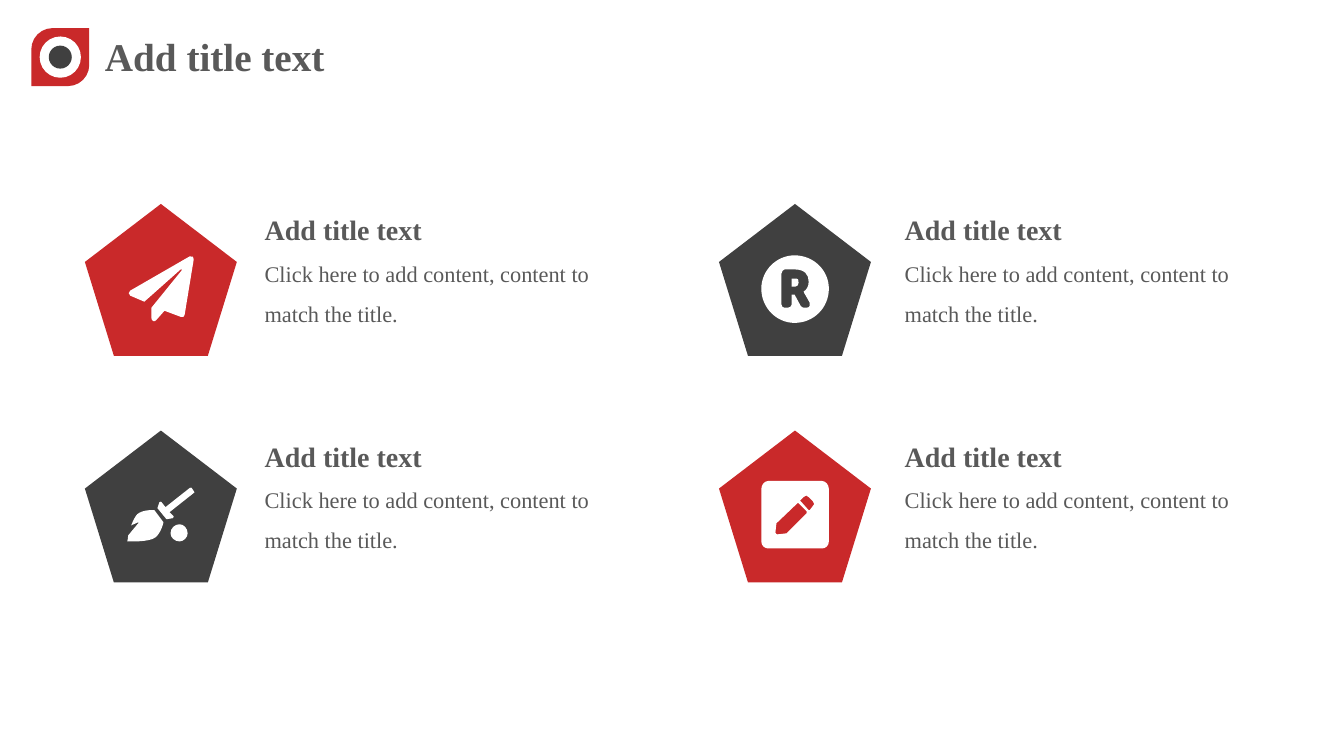
from dataclasses import dataclass

from lxml.etree import SubElement
from pptx import Presentation
from pptx.dml.color import RGBColor
from pptx.enum.shapes import MSO_SHAPE
from pptx.enum.text import MSO_ANCHOR, MSO_AUTO_SIZE, PP_ALIGN
from pptx.oxml.ns import qn
from pptx.util import Cm, Pt

COLORS = {"red": "C9292A", "dark": "404040", "text": "595959", "white": "FFFFFF"}
FONT = "Times New Roman"
HEADING = "Add title text"
BODY = "Click here to add content, content to match the title."

LEFT, TOP = 2.14, 5.14
PITCH_X, PITCH_Y = 15.98, 5.71
PENTAGON = 3.83
TEXT_LEFT, TEXT_PITCH_X, TEXT_RISE = 6.42, 16.13, 0.33
ICON_UNIT = Cm(0.0254)

# A contour lists points (x, y) and cubic curves (x1, y1, x2, y2, x, y),
# in icon units from the pentagon's top left corner.
Contour = list[tuple[int, ...]]

PLANE: list[Contour] = [
    [(104, 52), (45, 86), (43, 87, 43, 90, 45, 91), (59, 97), (95, 65),
     (96, 64, 97, 65, 96, 66), (66, 103), (66, 113), (66, 116, 69, 118, 71, 115),
     (79, 106), (95, 112), (97, 113, 99, 112, 99, 110), (108, 55),
     (109, 53, 106, 51, 104, 52)],
]
BROOM: list[Contour] = [
    [(69, 79), (78, 91), (78, 91, 76, 101, 70, 106), (64, 111, 42, 110, 42, 110),
     (42, 110, 43, 107, 43, 104), (53, 92), (54, 92, 53, 91, 53, 91), (46, 94),
     (48, 89, 50, 85, 52, 83), (58, 78, 69, 79, 69, 79)],
    [(94, 93), (89, 93, 85, 97, 85, 102), (85, 106, 89, 110, 94, 110),
     (98, 110, 102, 106, 102, 102), (102, 97, 98, 93, 94, 93)],
    [(108, 60), (106, 57), (106, 57, 105, 56, 104, 57), (80, 76), (76, 71),
     (76, 70, 75, 71, 74, 71), (72, 77), (81, 88), (87, 87),
     (88, 87, 88, 86, 88, 85), (84, 81), (108, 62), (109, 62, 109, 61, 108, 60)],
]
REGISTERED: list[Contour] = [
    [(79, 78), (79, 80, 78, 82, 76, 82), (72, 82), (72, 74), (75, 74),
     (79, 74, 79, 75, 79, 78)],
    [(109, 84), (109, 103, 94, 118, 75, 118), (57, 118, 42, 103, 42, 84),
     (42, 66, 57, 51, 75, 51), (94, 51, 109, 66, 109, 84)],
    [(90, 98), (84, 87, 84, 88, 84, 87), (87, 85, 89, 82, 89, 77),
     (89, 70, 85, 65, 75, 65), (65, 65), (64, 65, 62, 67, 62, 69), (62, 100),
     (62, 102, 64, 103, 65, 103), (68, 103), (70, 103, 72, 102, 72, 100), (72, 90),
     (75, 90), (81, 101), (82, 102, 83, 103, 84, 103), (87, 103),
     (90, 103, 91, 100, 90, 98)],
]
PENCIL: list[Contour] = [
    [(102, 117), (49, 117), (45, 117, 42, 114, 42, 110), (42, 58),
     (42, 54, 45, 50, 49, 50), (102, 50), (106, 50, 109, 54, 109, 58), (109, 110),
     (109, 114, 106, 117, 102, 117)],
    [(78, 72), (57, 92), (56, 101), (56, 102, 57, 103, 58, 103), (67, 102), (87, 82),
     (87, 81, 87, 81, 87, 80), (79, 72), (78, 72, 78, 72, 78, 72)],
    [(93, 70), (89, 66), (88, 64, 85, 64, 84, 66), (81, 69), (80, 70, 80, 70, 81, 70),
     (89, 79), (89, 79, 90, 79, 90, 79), (93, 75), (95, 74, 95, 72, 93, 70)],
]


@dataclass
class Item:
    col: int
    row: int
    color: str
    icon: list[Contour]


@dataclass
class BadgePart:
    shape: MSO_SHAPE
    left: float
    top: float
    size: float
    color: str


ITEMS = [
    Item(0, 0, "red", PLANE),
    Item(0, 1, "dark", BROOM),
    Item(1, 0, "dark", REGISTERED),
    Item(1, 1, "red", PENCIL),
]
BADGE = [
    BadgePart(MSO_SHAPE.ROUND_2_DIAG_RECTANGLE, 0.79, 0.71, 1.46, "red"),
    BadgePart(MSO_SHAPE.OVAL, 1.0, 0.92, 1.04, "white"),
    BadgePart(MSO_SHAPE.OVAL, 1.23, 1.15, 0.58, "dark"),
]


def paint(sp, color: str) -> None:
    sp.fill.solid()
    sp.fill.fore_color.rgb = RGBColor.from_string(COLORS[color])
    sp.line.fill.background()
    sp.shadow.inherit = False


def add_square(s, shape: MSO_SHAPE, left: float, top: float, size: float, color: str):
    """Add a preset shape as wide as it is high, in cm."""
    sp = s.shapes.add_shape(shape, Cm(left), Cm(top), Cm(size), Cm(size))
    paint(sp, color)
    return sp


def write(p, text: str, *, size: float, bold: bool = False, spacing: float = 1.0) -> None:
    p.alignment = PP_ALIGN.LEFT
    p.line_spacing = spacing
    r = p.add_run()
    r.text = text
    r.font.name = FONT
    r.font.size = Pt(size)
    r.font.bold = bold
    r.font.color.rgb = RGBColor.from_string(COLORS["text"])


def bend(line, seg: tuple[int, ...]) -> None:
    """Turn a path's straight segment into the cubic curve seg."""
    end = line[0]
    dx, dy = int(end.get("x")) - seg[4], int(end.get("y")) - seg[5]
    line.remove(end)
    line.tag = qn("a:cubicBezTo")
    for x, y in zip(seg[::2], seg[1::2]):
        SubElement(line, qn("a:pt"), x=str(x + dx), y=str(y + dy))


def add_icon(s, contours: list[Contour], left: float, top: float) -> None:
    builder = s.shapes.build_freeform(*contours[0][0], scale=ICON_UNIT)
    for i, contour in enumerate(contours):
        if i:
            builder.move_to(*contour[0])
        builder.add_line_segments([seg[-2:] for seg in contour[1:]], close=True)
    sp = builder.convert_to_shape(Cm(left), Cm(top))
    segments = [seg for contour in contours for seg in contour[1:]]
    lines = [el for el in sp._element.iter(qn("a:lnTo"))]
    for line, seg in zip(lines, segments):
        if len(seg) == 6:
            bend(line, seg)
    paint(sp, "white")


def add_title(s) -> None:
    sp = s.shapes.title
    sp.left, sp.top, sp.width, sp.height = Cm(2.39), Cm(0.69), Cm(6.12), Cm(1.45)
    tf = sp.text_frame
    tf.word_wrap = False
    tf.auto_size = MSO_AUTO_SIZE.NONE
    tf.vertical_anchor = MSO_ANCHOR.TOP
    write(tf.paragraphs[0], HEADING, size=28, bold=True)


def add_badge(s) -> None:
    for part in BADGE:
        sp = add_square(s, part.shape, part.left, part.top, part.size, part.color)
        if part.shape == MSO_SHAPE.ROUND_2_DIAG_RECTANGLE:
            sp.adjustments[0] = 0.367


def add_item(s, item: Item) -> None:
    left, top = LEFT + item.col * PITCH_X, TOP + item.row * PITCH_Y
    add_square(s, MSO_SHAPE.REGULAR_PENTAGON, left, top, PENTAGON, item.color)
    add_icon(s, item.icon, left, top)
    sp = s.shapes.add_textbox(Cm(TEXT_LEFT + item.col * TEXT_PITCH_X),
                              Cm(top - TEXT_RISE), Cm(9.68), Cm(3.48))
    tf = sp.text_frame
    tf.word_wrap = True
    tf.auto_size = MSO_AUTO_SIZE.SHAPE_TO_FIT_TEXT
    write(tf.paragraphs[0], HEADING, size=20, bold=True, spacing=1.5)
    write(tf.add_paragraph(), BODY, size=16, spacing=1.5)


def main() -> None:
    prs = Presentation()
    prs.slide_width, prs.slide_height = Cm(33.87), Cm(19.05)
    s = prs.slides.add_slide(prs.slide_layouts[5])
    add_title(s)
    add_badge(s)
    for item in ITEMS:
        add_item(s, item)
    prs.save("out.pptx")


if __name__ == "__main__":
    main()
